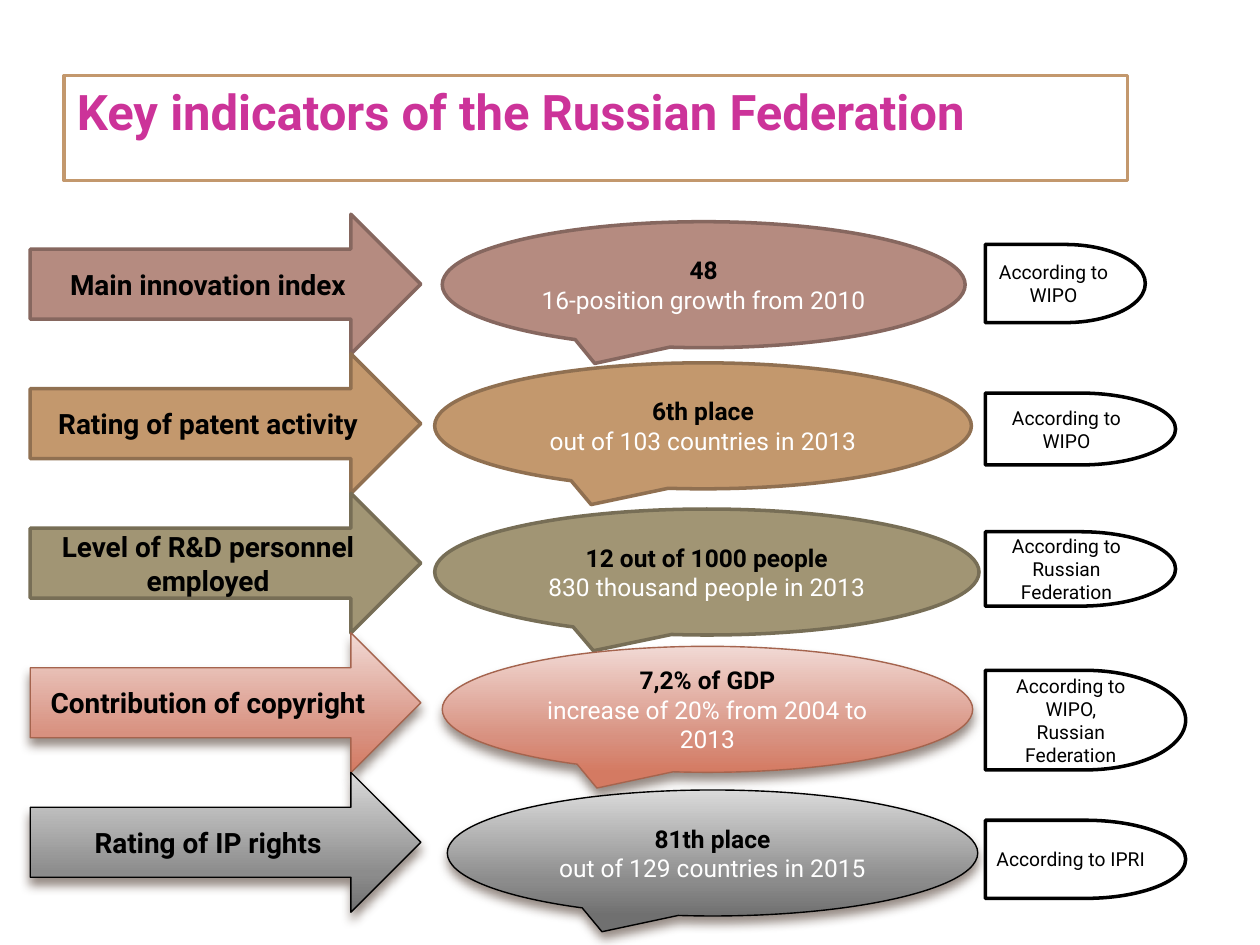
"""Build a slide of key innovation indicators with arrows, callouts and sources."""
import copy

import pptx
import pptx.dml.color
import pptx.enum.shapes
import pptx.enum.text
import pptx.oxml.ns
import pptx.util
from lxml import etree
from pptx.util import Inches

FONT = "Roboto"
SHAPES = pptx.enum.shapes.MSO_SHAPE
ALIGN = pptx.enum.text.PP_ALIGN
ANCHOR = pptx.enum.text.MSO_ANCHOR
COLORS = {
    "black": "000000",
    "white": "FFFFFF",
    "title": "CC3399",
    "rose": "B58B80",
    "rose line": "86675F",
    "tan": "C3986D",
    "tan line": "907051",
    "olive": "A19574",
    "olive line": "776E56",
    "coral light": "F1D9D4",
    "coral": "D89180",
    "coral dark": "D47A62",
    "coral line": "A5644E",
    "gray light": "DADADA",
    "gray": "8C8C8C",
    "gray dark": "707070",
    "shadow": "4E3B30",
}
STYLES = {
    "rose": (["rose"], "rose line"),
    "tan": (["tan"], "tan line"),
    "olive": (["olive"], "olive line"),
    "coral": (["coral light", "coral", "coral dark"], "coral line"),
    "gray": (["gray light", "gray", "gray dark"], "black"),
    "source": (["white"], "black"),
}
ARROW_TOP, ARROW_STEP = 1.7, 1.1075
INDICATORS = [
    ("rose", "Main innovation index",
     (3.51, 1.76, 4.15, 1), "48", "16-position growth from 2010",
     (7.82, 1.94, 1.27, 0.62), ["According to WIPO"]),
    ("tan", "Rating of patent activity",
     (3.45, 2.88, 4.26, 1), "6th place", "out of 103 countries in 2013",
     (7.82, 3.12, 1.51, 0.57), ["According to WIPO"]),
    ("olive", "Level of R&D personnel employed",
     (3.45, 4.04, 4.32, 1), "12 out of 1000 people", "830 thousand people in 2013",
     (7.82, 4.22, 1.51, 0.59), ["According to Russian Federation"]),
    ("coral", "Contribution of copyright",
     (3.51, 5.13, 4.21, 1), "7,2% of GDP", "increase of 20% from 2004 to 2013",
     (7.82, 5.32, 1.59, 0.79), ["According to WIPO,", "Russian Federation"]),
    ("gray", "Rating of IP rights",
     (3.55, 6.27, 4.21, 1), "81th place", "out of 129 countries in 2015",
     (7.82, 6.51, 1.59, 0.62), ["According to IPRI"]),
]


def rgb(name):
    """Return the named colour."""
    return pptx.dml.color.RGBColor.from_string(COLORS[name])


def set_line(shape, color, width):
    """Give the shape a solid outline."""
    shape.line.color.rgb = rgb(color)
    shape.line.width = pptx.util.Pt(width)


def set_gradient(shape, colors):
    """Fill the shape from top to bottom with three colours."""
    shape.fill.gradient()
    shape.fill.gradient_angle = 270
    stops = shape._element.spPr.find(".//" + pptx.oxml.ns.qn("a:gsLst"))
    stops.insert(1, copy.deepcopy(stops[0]))
    for stop, color, position in zip(shape.fill.gradient_stops, colors, (0, 0.72, 1)):
        stop.color.rgb = rgb(color)
        stop.position = position


def add_shadow(shape):
    """Add a soft shadow below the shape."""
    qn = pptx.oxml.ns.qn
    effects = shape._element.spPr.find(qn("a:effectLst"))
    shadow = etree.SubElement(
        effects, qn("a:outerShdw"), blurRad=str(pptx.util.Pt(6)),
        dist=str(pptx.util.Pt(4)), dir="5400000", rotWithShape="0")
    color = etree.SubElement(shadow, qn("a:srgbClr"), val=COLORS["shadow"])
    etree.SubElement(color, qn("a:alpha"), val="60000")


def set_font(paragraph, size, color, bold):
    """Format all the text of a paragraph."""
    paragraph.font.name = FONT
    paragraph.font.size = pptx.util.Pt(size)
    paragraph.font.bold = bold
    paragraph.font.color.rgb = rgb(color)


def add_label(slide, kind, place, style, size, lines):
    """Add a styled shape with centred lines of (text, colour, bold)."""
    shape = slide.shapes.add_shape(kind, *map(Inches, place))
    fills, outline = STYLES[style]
    shape.shadow.inherit = False
    if len(fills) == 1:
        shape.fill.solid()
        shape.fill.fore_color.rgb = rgb(fills[0])
        set_line(shape, outline, 2)
    else:
        set_gradient(shape, fills)
        set_line(shape, outline, 0.79)
        add_shadow(shape)
    frame = shape.text_frame
    frame.word_wrap = True
    frame.vertical_anchor = ANCHOR.MIDDLE
    frame.margin_left = frame.margin_right = Inches(0.07)
    frame.margin_top = frame.margin_bottom = Inches(0.04)
    frame.text = "\n".join(text for text, color, bold in lines)
    for paragraph, (text, color, bold) in zip(frame.paragraphs, lines):
        paragraph.alignment = ALIGN.CENTER
        set_font(paragraph, size, color, bold)


def set_title(slide, text):
    """Place and format the framed title."""
    title = slide.shapes.title
    title.left, title.top, title.width, title.height = map(Inches, (0.51, 0.6, 8.44, 0.57))
    title.fill.solid()
    title.fill.fore_color.rgb = rgb("white")
    set_line(title, "tan", 2)
    frame = title.text_frame
    frame.text = text
    frame.word_wrap = True
    frame.auto_size = pptx.enum.text.MSO_AUTO_SIZE.SHAPE_TO_FIT_TEXT
    frame.vertical_anchor = ANCHOR.TOP
    frame.paragraphs[0].alignment = ALIGN.LEFT
    set_font(frame.paragraphs[0], 28, "title", True)


def main():
    """Build and save the deck."""
    deck = pptx.Presentation()
    deck.slide_width, deck.slide_height = Inches(10), Inches(7.5)
    slide = deck.slides.add_slide(deck.slide_layouts[5])
    set_title(slide, "Key indicators of the Russian Federation")
    for row, indicator in enumerate(INDICATORS):
        style, name, callout, value, detail, source, source_lines = indicator
        arrow = (0.24, ARROW_TOP + row * ARROW_STEP, 3.1, 1.11)
        add_label(slide, SHAPES.RIGHT_ARROW, arrow, style, 16, [(name, "black", True)])
        add_label(slide, SHAPES.OVAL_CALLOUT, callout, style, 14,
                  [(value, "black", True), (detail, "white", False)])
        add_label(slide, SHAPES.FLOWCHART_DELAY, source, "source", 11,
                  [(line, "black", False) for line in source_lines])
    deck.save("out.pptx")


if __name__ == "__main__":
    main()
